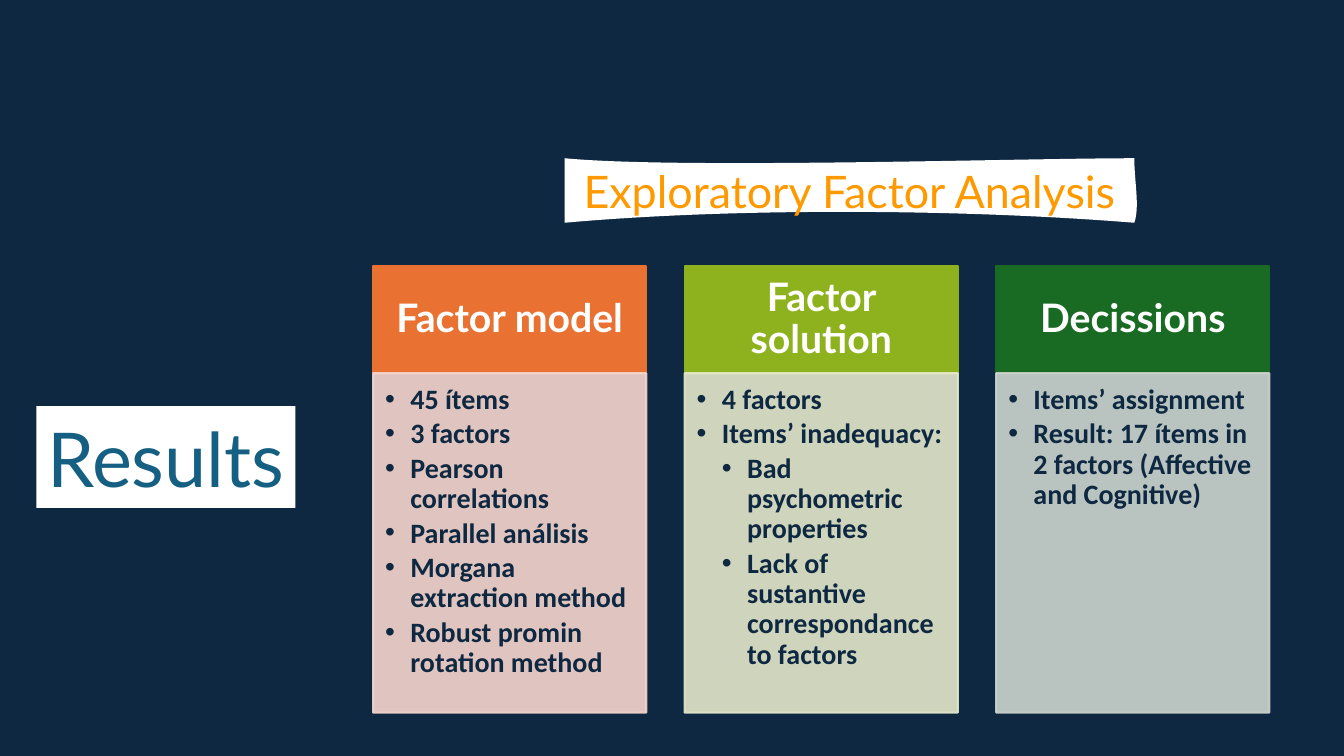
from pptx import Presentation
from pptx.dml.color import RGBColor
from pptx.enum.shapes import MSO_SHAPE
from pptx.enum.text import MSO_ANCHOR, MSO_AUTO_SIZE, PP_ALIGN
from pptx.oxml.ns import qn
from pptx.util import Inches, Pt
from lxml.etree import SubElement

NAVY = RGBColor(0x0E, 0x28, 0x41)
WHITE = RGBColor(0xFF, 0xFF, 0xFF)
TEAL = RGBColor(0x15, 0x60, 0x82)
AMBER = RGBColor(0xFF, 0x99, 0x00)
ORANGE = RGBColor(0xE9, 0x71, 0x32)
PINK = RGBColor(0xF7, 0xD5, 0xCE)
LIME = RGBColor(0x8E, 0xB2, 0x1E)
PALE_LIME = RGBColor(0xE5, 0xE8, 0xCA)
GREEN = RGBColor(0x19, 0x6B, 0x24)
PALE_GREEN = RGBColor(0xCC, 0xD4, 0xCD)

# Boxes are left, top, width, height in inches
TITLE_BOX = (0.36, 4.03, 2.57, 1.01)
SUBTITLE_BOX = (5.6, 1.57, 5.65, 0.64)
COLUMNS_BOX = (3.7, 2.64, 8.89, 4.43)
COLUMN_GAP = 0.38
HEADER_SHARE = 0.24
INDENT = 0.25

# Two control points for the top, right, bottom and left edge, as shares of the box
CORNERS = [(1, 0), (1, 1), (0, 1), (0, 0)]
TITLE_EDGES = [((.42, .11), (.65, 0)), ((1.02, .15), (1.03, .87)),
               ((.56, .86), (.46, .85)), ((-.02, .75), (.02, .16))]
SUBTITLE_EDGES = [((.2, .17), (.8, 0)), ((1, .36), (1.01, .75)),
                  ((.69, .78), (.29, .77)), ((0, .5), (0, .5))]

# Header, header colour, body colour, bullets as (level, text)
COLUMNS = [
    ("Factor model", ORANGE, PINK,
     [(1, "45 ítems"), (1, "3 factors"), (1, "Pearson correlations"),
      (1, "Parallel análisis"), (1, "Morgana extraction method"),
      (1, "Robust promin rotation method")]),
    ("Factor solution", LIME, PALE_LIME,
     [(1, "4 factors"), (1, "Items’ inadequacy:"),
      (2, "Bad psychometric properties"),
      (2, "Lack of sustantive correspondance to factors")]),
    ("Decissions", GREEN, PALE_GREEN,
     [(1, "Items’ assignment"),
      (1, "Result: 17 ítems in 2 factors (Affective and Cognitive)")]),
]


def write_text(para, text, *, size, color, font="Lato", bold=False,
               align=PP_ALIGN.CENTER, spacing=None, after=0, level=0):
    if level:
        properties = para._p.get_or_add_pPr()
        properties.set("marL", str(Inches(INDENT * level)))
        properties.set("indent", str(-Inches(INDENT)))
        SubElement(properties, qn("a:buFont")).set("typeface", "Arial")
        SubElement(properties, qn("a:buChar")).set("char", "•")
        para.level = level
    para.alignment = align
    para.line_spacing = spacing
    para.space_before, para.space_after = Pt(0), Pt(after)
    span = para.add_run()
    span.text = text
    span.font.name, span.font.size, span.font.bold = font, Pt(size), bold
    span.font.color.rgb = color


def set_frame(frame, *, anchor, insets, wrap=True):
    frame.auto_size = MSO_AUTO_SIZE.NONE
    frame.word_wrap = wrap
    frame.vertical_anchor = anchor
    (frame.margin_left, frame.margin_top,
     frame.margin_right, frame.margin_bottom) = map(Inches, insets)


def add_curved_paper(page, box, edges):
    """Freeform whose four straight edges are bent into cubic curves."""
    left, top, width, height = box
    builder = page.shapes.build_freeform(Inches(left), Inches(top))
    builder.add_line_segments([(Inches(left + x * width), Inches(top + y * height))
                               for x, y in CORNERS], close=False)
    paper = builder.convert_to_shape()
    paper.shadow.inherit = False
    lines = list(paper._element.iter(qn("a:lnTo")))
    for line, controls, end in zip(lines, edges, CORNERS):
        line.tag = qn("a:cubicBezTo")
        line.remove(line[0])
        for x, y in (*controls, end):
            point = SubElement(line, qn("a:pt"))
            point.set("x", str(Inches(x * width)))
            point.set("y", str(Inches(y * height)))
    SubElement(lines[-1].getparent(), qn("a:close"))
    return paper


def add_label(page, box, edges, text, title=None, **style):
    """Curved white paper with text; a title placeholder takes over its outline."""
    label = add_curved_paper(page, box, edges)
    if title is not None:
        title.left, title.top, title.width, title.height = map(Inches, box)
        title._element.spPr.append(label._element.spPr.find(qn("a:custGeom")))
        page.shapes._spTree.remove(label._element)
        label = title
    label.fill.solid()
    label.fill.fore_color.rgb = WHITE
    label.line.fill.background()
    set_frame(label.text_frame, anchor=MSO_ANCHOR.MIDDLE,
              insets=(0.1, 0.05, 0.1, 0.05), wrap=False)
    write_text(label.text_frame.paragraphs[0], text, **style)


def add_panel(page, box, color, opacity=100):
    panel = page.shapes.add_shape(MSO_SHAPE.RECTANGLE, *map(Inches, box))
    panel.shadow.inherit = False
    panel.fill.solid()
    panel.fill.fore_color.rgb = color
    panel.line.color.rgb = color
    panel.line.width = Pt(1.5)
    if opacity < 100:
        for tone in panel._element.spPr.iter(qn("a:srgbClr")):
            SubElement(tone, qn("a:alpha")).set("val", str(opacity * 1000))
    return panel.text_frame


def add_column(page, box, header, header_color, body_color, bullets):
    left, top, width, height = box
    header_height = height * HEADER_SHARE
    # Header
    frame = add_panel(page, (left, top, width, header_height), header_color)
    set_frame(frame, anchor=MSO_ANCHOR.MIDDLE, insets=(0.22, 0.12, 0.22, 0.12))
    write_text(frame.paragraphs[0], header, size=28, color=WHITE, bold=True, spacing=0.9)
    # Bullets
    frame = add_panel(page, (left, top + header_height, width, height - header_height),
                      body_color, opacity=90)
    set_frame(frame, anchor=MSO_ANCHOR.TOP, insets=(0.12, 0.12, 0.15, 0.17))
    for number, (level, text) in enumerate(bullets):
        para = frame.add_paragraph() if number else frame.paragraphs[0]
        write_text(para, text, size=20, color=NAVY, font="Calibri", bold=True,
                   align=PP_ALIGN.LEFT, spacing=0.9, after=3, level=level)


def add_columns(page, box):
    left, top, width, height = box
    column_width = (width - COLUMN_GAP * (len(COLUMNS) - 1)) / len(COLUMNS)
    for number, column in enumerate(COLUMNS):
        column_left = left + number * (column_width + COLUMN_GAP)
        add_column(page, (column_left, top, column_width, height), *column)


def main():
    deck = Presentation()
    deck.slide_width, deck.slide_height = Inches(13.33), Inches(7.5)
    page = deck.slides.add_slide(deck.slide_layouts[5])
    page.background.fill.solid()
    page.background.fill.fore_color.rgb = NAVY

    add_label(page, TITLE_BOX, TITLE_EDGES, "Results",
              title=page.shapes.title, size=54, color=TEAL)
    add_label(page, SUBTITLE_BOX, SUBTITLE_EDGES, "Exploratory Factor Analysis",
              size=32, color=AMBER)
    add_columns(page, COLUMNS_BOX)
    deck.save("out.pptx")


if __name__ == "__main__":
    main()
